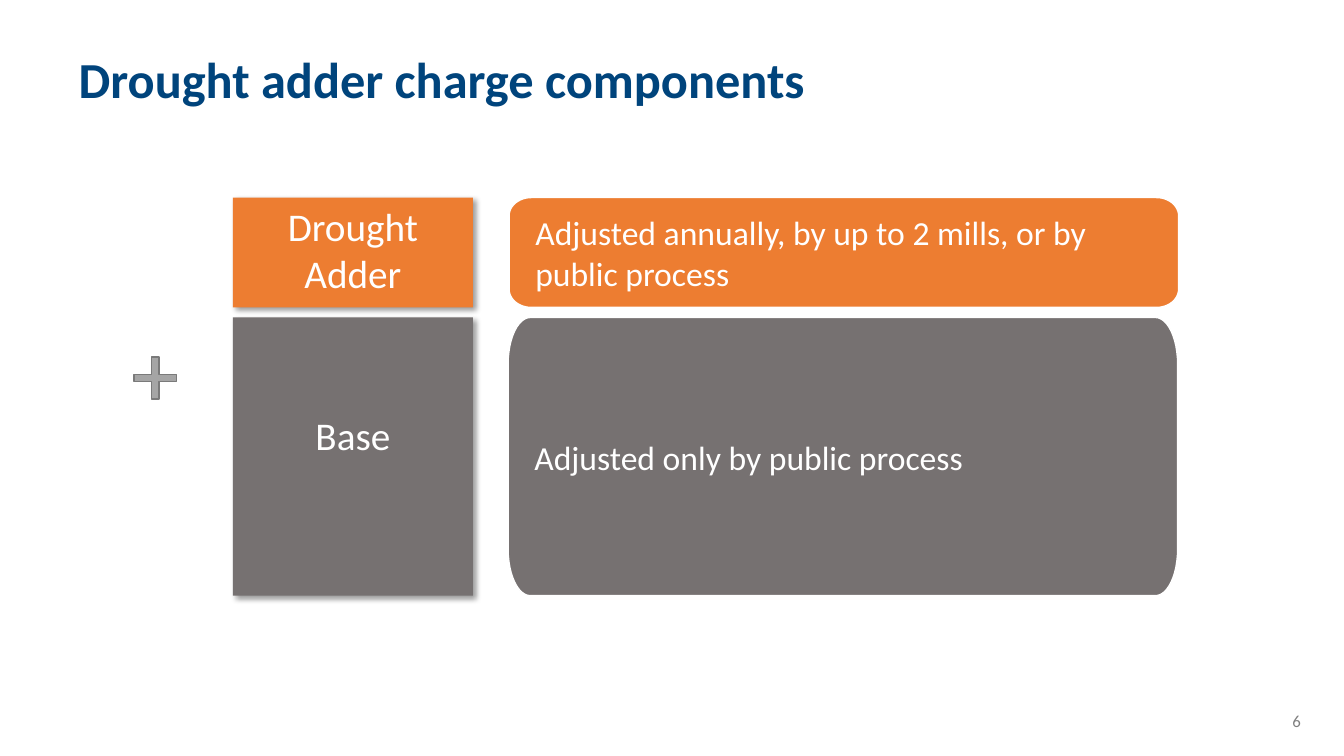
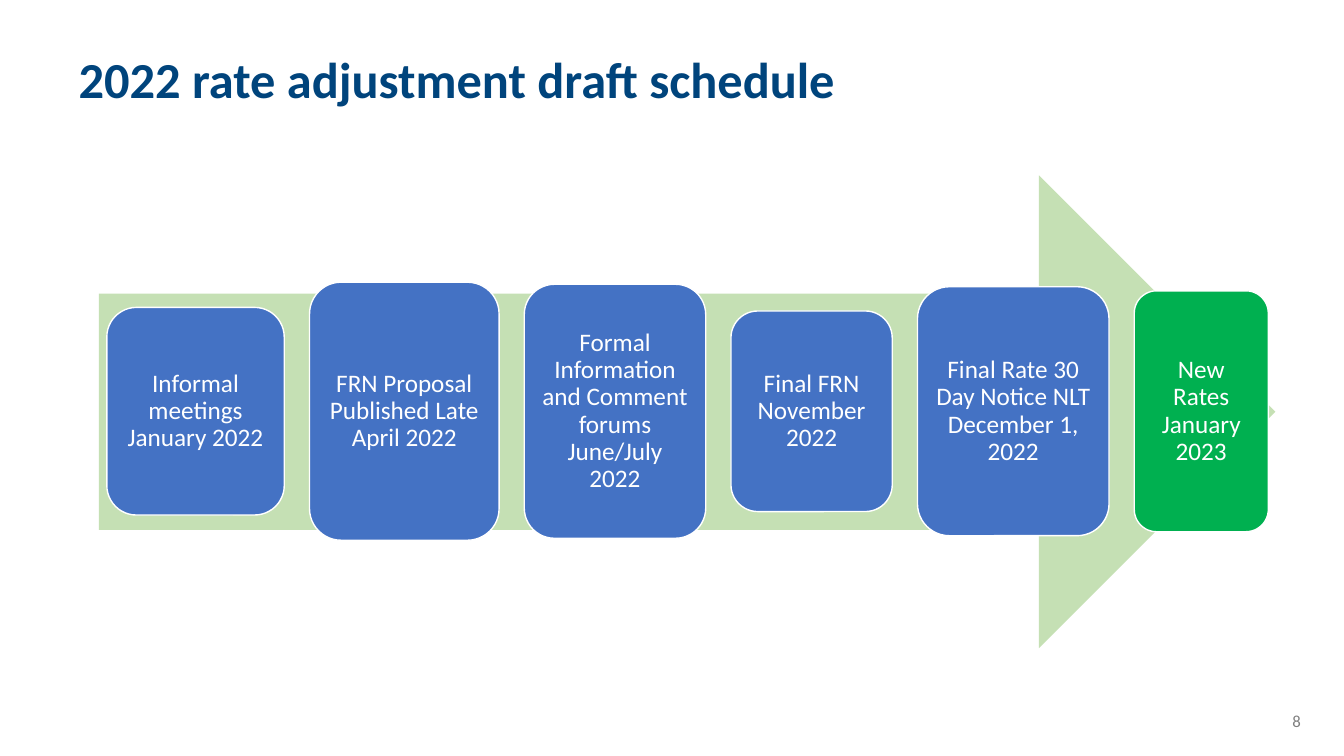
import math

import lxml.etree
import pptx
import pptx.dml.color
import pptx.enum.shapes
import pptx.enum.text
import pptx.oxml
import pptx.oxml.ns
import pptx.util

Inches = pptx.util.Inches
Pt = pptx.util.Pt
SHAPE = pptx.enum.shapes.MSO_SHAPE
ALIGN = pptx.enum.text.PP_ALIGN
ANCHOR = pptx.enum.text.MSO_ANCHOR

# Shared look
FONT = "Calibri"
NAVY, WHITE, NUMBER_GRAY = "00447C", "FFFFFF", "808080"
ORANGE, GRAY, BLUE, GREEN, PALE_GREEN = "ED7D31", "767171", "4472C4", "00B050", "C5E0B4"
SHADOW = (
    '<a:outerShdw xmlns:a="http://schemas.openxmlformats.org/drawingml/2006/main" '
    'blurRad="50800" dist="38100" dir="2700000" algn="tl" rotWithShape="0">'
    '<a:srgbClr val="000000"><a:alpha val="40000"/></a:srgbClr></a:outerShdw>'
)


def rgb(value):
    return pptx.dml.color.RGBColor.from_string(value)


def style(sp, fill=None, line=None, text=None, size=18, color=WHITE, bold=False,
          frame=None, para=None):
    if fill:
        sp.shadow.inherit = False
        sp.fill.solid()
        sp.fill.fore_color.rgb = rgb(fill)
        if line:
            sp.line.color.rgb = rgb(line)
            sp.line.width = Pt(1)
        else:
            sp.line.fill.background()
    if text:
        tf = sp.text_frame
        tf.text = text
        p = tf.paragraphs[0]
        font = {"name": FONT, "size": Pt(size), "bold": bold}
        frame = {"word_wrap": True, "vertical_anchor": ANCHOR.MIDDLE, **(frame or {})}
        for target, values in ((tf, frame), (p, para or {}), (p.runs[0].font, font)):
            for name, value in values.items():
                setattr(target, name, value)
        p.runs[0].font.color.rgb = rgb(color)


prs = pptx.Presentation()
prs.slide_width = Inches(13.33)
prs.slide_height = Inches(7.5)

# Titles and slide numbers
slides = []
for title, number in (("Drought adder charge components", "6"),
                      ("2022 rate adjustment draft schedule", "8")):
    s = prs.slides.add_slide(prs.slide_layouts[5])
    sp = s.shapes.title
    box = {"left": 0.68, "top": 0.09, "width": 11.5, "height": 1.45}
    for name, value in box.items():
        setattr(sp, name, Inches(value))
    style(sp, text=title, size=36, color=NAVY, bold=True,
          frame={"auto_size": pptx.enum.text.MSO_AUTO_SIZE.NONE},
          para={"alignment": ALIGN.LEFT, "line_spacing": 0.9})
    sp = s.shapes.add_textbox(Inches(10), Inches(6.95), Inches(3), Inches(0.4))
    style(sp, text=number, size=12, color=NUMBER_GRAY, para={"alignment": ALIGN.RIGHT})
    slides.append(s)
components, schedule = slides

# Charge components: a label and its explanation in each row
rows = (
    ("Drought Adder", "Adjusted annually, by up to 2 mills, or by public process",
     ORANGE, 1.96, 1.09, 0.05, 5.05, 0.18),
    ("Base", "Adjusted only by public process",
     GRAY, 3.15, 2.76, 0.93, 5.04, 0.46),
)
note_width, radius_x = 6.64, 0.22
note_margins = {f"margin_{side}": Inches(0.26) for side in ("left", "top", "right", "bottom")}
for label, note, fill, top, height, label_margin, note_left, radius_y in rows:
    sp = components.shapes.add_shape(SHAPE.RECTANGLE, Inches(2.31), Inches(top),
                                     Inches(2.38), Inches(height))
    style(sp, fill, text=label, size=28,
          frame={"vertical_anchor": ANCHOR.TOP, "margin_top": Inches(label_margin)},
          para={"alignment": ALIGN.CENTER})
    effects = sp._element.spPr.find(pptx.oxml.ns.qn("a:effectLst"))
    effects.append(lxml.etree.fromstring(SHADOW))

    # Outline with elliptical corners, clockwise from the left end of the top left one
    points = []
    for corner, (x_side, y_side) in enumerate(((0, 0), (1, 0), (1, 1), (0, 1))):
        center_x = note_left + (note_width - radius_x if x_side else radius_x)
        center_y = top + (height - radius_y if y_side else radius_y)
        for step in range(13):
            angle = math.radians(180 + 90 * corner + 7.5 * step)
            points.append((Inches(center_x + radius_x * math.cos(angle)),
                           Inches(center_y + radius_y * math.sin(angle))))
    outline = components.shapes.build_freeform(*points[0])
    outline.add_line_segments(points[1:], close=True)
    style(outline.convert_to_shape(), fill, WHITE, note, 24, frame=note_margins,
          para={"alignment": ALIGN.LEFT})

# Plus sign
sp = components.shapes.add_shape(SHAPE.CROSS, Inches(1.33), Inches(3.54),
                                 Inches(0.42), Inches(0.42))
sp.adjustments[0] = 0.415
style(sp, "A5A5A5", "7A7A7A")

# Schedule: arrow behind a row of steps
sp = schedule.shapes.add_shape(SHAPE.RIGHT_ARROW, Inches(0.98), Inches(1.74),
                               Inches(11.67), Inches(4.69))
style(sp, PALE_GREEN)

steps = (
    ("Informal meetings January 2022", 1.76, 2.06, BLUE),
    ("FRN Proposal Published Late April 2022", 1.88, 2.56, BLUE),
    ("Formal Information and Comment forums June/July 2022", 1.8, 2.52, BLUE),
    ("Final FRN November 2022", 1.6, 1.99, BLUE),
    ("Final Rate 30 Day Notice NLT December 1, 2022", 1.9, 2.47, BLUE),
    ("New Rates January 2023", 1.33, 2.39, GREEN),
)
step_margins = {f"margin_{side}": Inches(0.07) for side in ("left", "top", "right", "bottom")}
left, gap, middle = 1.06, 0.25, 4.08
for text, width, height, fill in steps:
    sp = schedule.shapes.add_shape(SHAPE.ROUNDED_RECTANGLE, Inches(left),
                                   Inches(middle - height / 2), Inches(width), Inches(height))
    style(sp, fill, WHITE, text, frame=step_margins,
          para={"alignment": ALIGN.CENTER, "line_spacing": 0.9})
    left += width + gap

prs.save("out.pptx")
